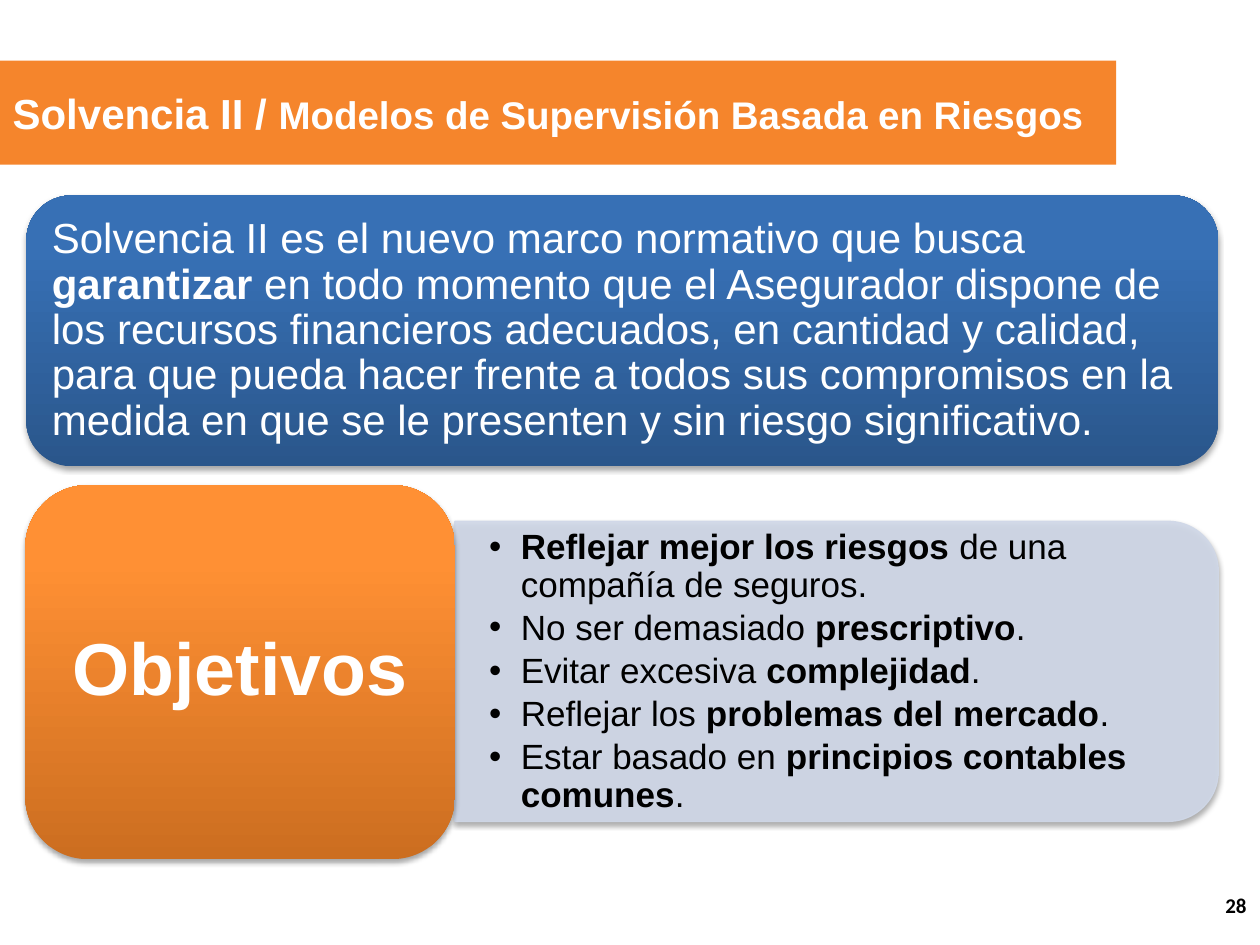
"""Build the Solvencia II slide: definition on top, objectives below."""
from pptx import Presentation
from pptx import util as u
from pptx.dml.color import RGBColor
from pptx.enum import shapes, text
from pptx.oxml.ns import qn
from lxml import etree

WHITE, BLACK = RGBColor(255, 255, 255), RGBColor(0, 0, 0)
ORANGE, PALE = RGBColor(0xF5, 0x85, 0x2C), RGBColor(0xD0, 0xD8, 0xE8)
BLUES = [(0, "2A568B"), (80, "3770B5"), (100, "3570B8")]
ORANGES = [(0, "CC6E20"), (80, "FF9034"), (100, "FF9136")]

TITLE = [("Solvencia II / ", True, 24),
         ("Modelos de Supervisión Basada en Riesgos", True, 22)]
DEFINITION = [
    ("Solvencia II es el nuevo marco normativo que busca ", False),
    ("garantizar", True),
    (" en todo momento que el Asegurador dispone de los recursos financieros "
     "adecuados, en cantidad y calidad, para que pueda hacer frente a todos sus "
     "compromisos en la medida en que se le presenten y sin riesgo significativo.", False),
]
GOALS = [
    [("Reflejar mejor los riesgos", True), (" de una compañía de seguros.", False)],
    [("No ser demasiado ", False), ("prescriptivo", True), (".", False)],
    [("Evitar excesiva ", False), ("complejidad", True), (".", False)],
    [("Reflejar los ", False), ("problemas del mercado", True), (".", False)],
    [("Estar basado en ", False), ("principios contables comunes", True), (".", False)],
]

BOXES = {
    "title": (0, 1.22, 22.5, 2.1),
    "definition": (0.53, 3.94, 24.03, 5.46),
    "panel": (13.84, 5.84, 6.05, 15.39),
    "goals": (9.17, 10.82, 15.11, 5.46),
    "heading": (0.51, 9.78, 8.66, 7.54),
    "number": (19.46, 17.73, 5.92, 1.02),
}


def place(name):
    return [u.Cm(v) for v in BOXES[name]]


def child(parent, tag, **attrs):
    return etree.SubElement(parent, qn(tag), {k: str(v) for k, v in attrs.items()})


def write(sp, paragraphs, size, color, align=text.PP_ALIGN.LEFT, font="Arial",
          spacing=0.9, after=0, bullet=False, margins=None):
    tf = sp.text_frame
    frame = {"word_wrap": True, "vertical_anchor": text.MSO_ANCHOR.MIDDLE}
    if margins:
        x, y = map(u.Cm, margins)
        frame.update(margin_left=x, margin_right=x, margin_top=y, margin_bottom=y)
    for key, value in frame.items():
        setattr(tf, key, value)
    for i, runs in enumerate(paragraphs):
        p = tf.paragraphs[0] if i == 0 else tf.add_paragraph()
        for key, value in {"alignment": align, "line_spacing": spacing,
                           "space_after": u.Pt(after)}.items():
            setattr(p, key, value)
        if bullet:
            pPr = p._p.get_or_add_pPr()
            pPr.set("marL", str(u.Cm(0.64)))
            pPr.set("indent", str(-u.Cm(0.64)))
            child(pPr, "a:buFont", typeface="Arial")
            child(pPr, "a:buChar", char="•")
        for content, bold, *own_size in runs:
            r = p.add_run()
            r.text = content
            for key, value in {"name": font, "bold": bold,
                               "size": u.Pt(own_size[0] if own_size else size)}.items():
                setattr(r.font, key, value)
            r.font.color.rgb = color


def add_card(s, name, kind):
    sp = s.shapes.add_shape(kind, *place(name))
    sp.line.fill.background()
    sp.shadow.inherit = False
    effects = sp._element.spPr.find(qn("a:effectLst"))
    shadow = child(effects, "a:outerShdw", blurRad=40000, dist=23000,
                   dir=5400000, rotWithShape=0)
    child(child(shadow, "a:srgbClr", val="000000"), "a:alpha", val=35000)
    return sp


def fill_gradient(sp, stops):
    sp.fill.gradient()
    sp.fill.gradient_angle = 90
    gs_list = sp._element.spPr.find(".//" + qn("a:gsLst"))
    for gs in list(gs_list):
        gs_list.remove(gs)
    for pos, color in stops:
        child(child(gs_list, "a:gs", pos=pos * 1000), "a:srgbClr", val=color)


def main():
    prs = Presentation()
    prs.slide_width, prs.slide_height = u.Cm(25.4), u.Cm(19.05)
    s = prs.slides.add_slide(prs.slide_layouts[5])

    title = s.shapes.title
    title.left, title.top, title.width, title.height = place("title")
    title.fill.solid()
    title.fill.fore_color.rgb = ORANGE
    write(title, [TITLE], 24, WHITE, spacing=1.0)

    rounded = shapes.MSO_SHAPE.ROUNDED_RECTANGLE
    definition = add_card(s, "definition", rounded)
    fill_gradient(definition, BLUES)
    write(definition, [DEFINITION], 24, WHITE)

    panel = add_card(s, "panel", shapes.MSO_SHAPE.ROUND_2_SAME_RECTANGLE)
    panel.rotation = 90
    panel.line.width = u.Pt(0.75)
    for fill in (panel.fill, panel.line.fill):
        fill.solid()
        fill.fore_color.rgb = PALE
    for color in panel._element.spPr.findall(".//" + qn("a:solidFill") + "/" + qn("a:srgbClr")):
        child(color, "a:alpha", val=90000)
    write(s.shapes.add_textbox(*place("goals")), GOALS, 20, BLACK,
          after=3, bullet=True, margins=(0.69, 0.36))

    heading = add_card(s, "heading", rounded)
    fill_gradient(heading, ORANGES)
    write(heading, [[("Objetivos", True)]], 42, WHITE,
          align=text.PP_ALIGN.CENTER, margins=(0.43, 0.23))

    write(s.shapes.add_textbox(*place("number")), [[("28", True)]], 12, BLACK,
          align=text.PP_ALIGN.RIGHT, font="Calibri", spacing=1.0)
    prs.save("out.pptx")


if __name__ == "__main__":
    main()
